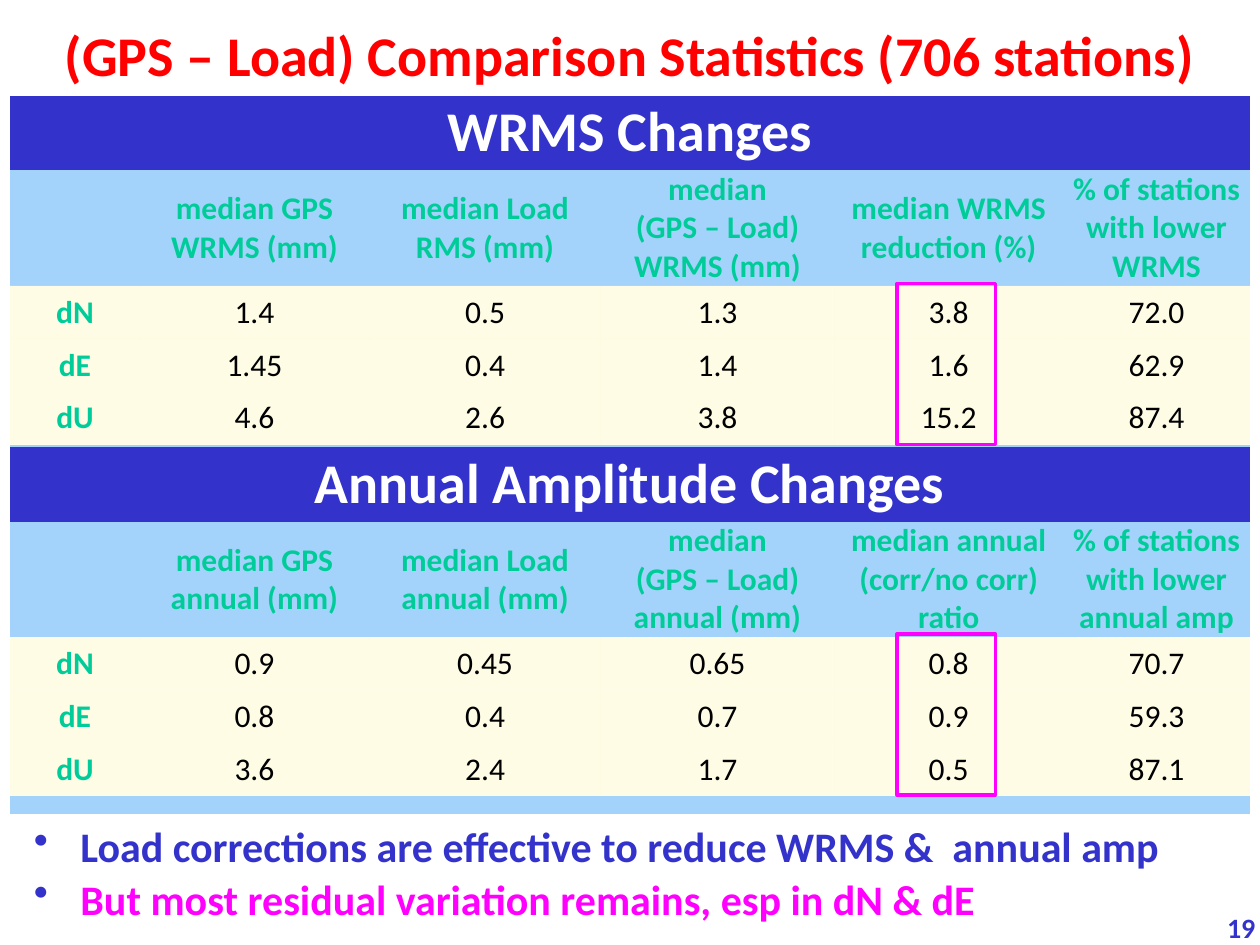
import dataclasses
from typing import Any, Optional

import lxml.etree
import pptx
import pptx.dml.color
import pptx.enum.shapes
import pptx.enum.text
import pptx.oxml.ns
import pptx.util

Inches = pptx.util.Inches
Pt = pptx.util.Pt
PP_ALIGN = pptx.enum.text.PP_ALIGN
MIDDLE = pptx.enum.text.MSO_ANCHOR.MIDDLE


@dataclasses.dataclass(frozen=True)
class Theme:
    font: str = "Calibri"
    red: str = "FF0000"
    blue: str = "3333CC"
    white: str = "FFFFFF"
    sky: str = "A3D3FB"
    cream: str = "FEFBDB"
    green: str = "00CC99"
    black: str = "000000"
    magenta: str = "FF00FF"
    heading_size: int = 32
    bullet_size: int = 24
    table_size: int = 18
    number_size: int = 16
    spacer_size: int = 1
    cream_alpha: int = 70


@dataclasses.dataclass(frozen=True)
class Box:
    left: float
    top: float
    width: float
    height: float

    def lengths(self) -> tuple:
        return tuple(Inches(value) for value in dataclasses.astuple(self))


@dataclasses.dataclass(frozen=True)
class StatisticsTable:
    title: str
    top: float
    marker_top: float
    headers: tuple[str, ...]
    rows: tuple[tuple[str, ...], ...]


THEME = Theme()
TABLE_LEFT = 0.08
COLUMN_WIDTHS = (1.03, 1.82, 1.84, 1.85, 1.82, 1.48)
ROW_HEIGHTS = (0.59, 0.92, 0.42, 0.42, 0.42, 0.14)
NO_STYLE = "{2D5ABB26-0587-4C30-8999-92F81FD0307C}"

TABLES = (
    StatisticsTable(
        "WRMS Changes", 0.76, 2.25,
        ("", "median GPS WRMS (mm)", "median Load RMS (mm)",
         "median\n(GPS – Load) WRMS (mm)", "median WRMS reduction (%)",
         "% of stations with lower WRMS"),
        (("dN", "1.4", "0.5", "1.3", "3.8", "72.0"),
         ("dE", "1.45", "0.4", "1.4", "1.6", "62.9"),
         ("dU", "4.6", "2.6", "3.8", "15.2", "87.4")),
    ),
    StatisticsTable(
        "Annual Amplitude Changes", 3.55, 5.03,
        ("", "median GPS annual (mm)", "median Load annual (mm)",
         "median\n(GPS – Load) annual (mm)", "median annual (corr/no corr) ratio",
         "% of stations with lower annual amp"),
        (("dN", "0.9", "0.45", "0.65", "0.8", "70.7"),
         ("dE", "0.8", "0.4", "0.7", "0.9", "59.3"),
         ("dU", "3.6", "2.4", "1.7", "0.5", "87.1")),
    ),
)
CONCLUSIONS = (
    ("Load corrections are effective to reduce WRMS &  annual amp", THEME.blue),
    ("But most residual variation remains, esp in dN & dE", THEME.magenta),
)


def rgb(color: str) -> pptx.dml.color.RGBColor:
    return pptx.dml.color.RGBColor.from_string(color)


def apply(target: Any, formats: dict[str, Any]) -> None:
    for attribute, value in formats.items():
        setattr(target, attribute, value)


def add_xml(parent: Any, tag: str, **attributes: str) -> Any:
    child = lxml.etree.SubElement(parent, pptx.oxml.ns.qn(tag))
    for key, value in attributes.items():
        child.set(key, value)
    return child


def write(paragraph: Any, text: str, size: int, color: str, bold: bool = True, **formats: Any) -> None:
    run = paragraph.add_run()
    run.text = text
    apply(run.font, {"name": THEME.font, "size": Pt(size), "bold": bold})
    run.font.color.rgb = rgb(color)
    apply(paragraph, formats)


def add_text_frame(slide: Any, box: Box, **formats: Any) -> Any:
    frame = slide.shapes.add_textbox(*box.lengths()).text_frame
    apply(frame, {"word_wrap": True, **formats})
    return frame


def add_bullet(paragraph: Any, color: str) -> None:
    properties = paragraph._p.get_or_add_pPr()
    apply_indent = {"marL": Inches(0.37), "indent": Inches(-0.37)}
    for key, value in apply_indent.items():
        properties.set(key, str(value))
    add_xml(add_xml(properties, "a:buClr"), "a:srgbClr", val=color)
    add_xml(properties, "a:buChar", char="•")


def fill_cell(cell: Any, text: str, fill: str, size: int, color: str,
              bold: bool = True, alpha: Optional[int] = None) -> None:
    margins = dict.fromkeys(("margin_left", "margin_top", "margin_right", "margin_bottom"), 0)
    apply(cell, {**margins, "vertical_anchor": MIDDLE})
    cell.fill.solid()
    cell.fill.fore_color.rgb = rgb(fill)
    if alpha is not None:
        solid_color = cell._tc.tcPr.find(".//" + pptx.oxml.ns.qn("a:srgbClr"))
        add_xml(solid_color, "a:alpha", val=str(alpha * 1000))
    frame = cell.text_frame
    if not text:
        # A small end mark keeps an empty row at its set height.
        frame.paragraphs[0]._p.get_or_add_endParaRPr().set("sz", str(size * 100))
    for index, line in enumerate(text.split("\n") if text else ()):
        paragraph = frame.add_paragraph() if index else frame.paragraphs[0]
        write(paragraph, line, size, color, bold, alignment=PP_ALIGN.CENTER)


def add_statistics(slide: Any, statistics: StatisticsTable) -> None:
    box = Box(TABLE_LEFT, statistics.top, sum(COLUMN_WIDTHS), sum(ROW_HEIGHTS))
    table = slide.shapes.add_table(len(ROW_HEIGHTS), len(COLUMN_WIDTHS), *box.lengths()).table
    apply(table, {"first_row": False, "horz_banding": False})
    table._tbl.tblPr.find(pptx.oxml.ns.qn("a:tableStyleId")).text = NO_STYLE
    for column, width in zip(table.columns, COLUMN_WIDTHS):
        column.width = Inches(width)
    for row, height in zip(table.rows, ROW_HEIGHTS):
        row.height = Inches(height)

    last_row = len(ROW_HEIGHTS) - 1
    for banner in (0, last_row):
        table.cell(banner, 0).merge(table.cell(banner, len(COLUMN_WIDTHS) - 1))
    fill_cell(table.cell(0, 0), statistics.title, THEME.blue, THEME.heading_size, THEME.white)
    for column, header in enumerate(statistics.headers):
        fill_cell(table.cell(1, column), header, THEME.sky, THEME.table_size, THEME.green)
    for row, values in enumerate(statistics.rows, start=2):
        for column, value in enumerate(values):
            is_component = column == 0
            fill_cell(table.cell(row, column), value, THEME.cream, THEME.table_size,
                      THEME.green if is_component else THEME.black,
                      is_component, THEME.cream_alpha)
    for column in range(len(COLUMN_WIDTHS)):
        fill_cell(table.cell(last_row, column), "", THEME.sky, THEME.spacer_size, THEME.black)


def add_marker(slide: Any, top: float) -> None:
    """Outline the reduction values of one table."""
    marker = slide.shapes.add_shape(pptx.enum.shapes.MSO_SHAPE.RECTANGLE,
                                    *Box(7.12, top, 0.78, 1.28).lengths())
    marker.shadow.inherit = False
    marker.fill.background()
    marker.line.color.rgb = rgb(THEME.magenta)
    marker.line.width = Pt(2)


def main() -> None:
    presentation = pptx.Presentation()
    apply(presentation, {"slide_width": Inches(10), "slide_height": Inches(7.5)})
    slide = presentation.slides.add_slide(presentation.slide_layouts[6])

    title = add_text_frame(slide, Box(0, 0.01, 10, 0.84), vertical_anchor=MIDDLE)
    write(title.paragraphs[0], "(GPS – Load) Comparison Statistics (706 stations)",
          THEME.heading_size, THEME.red, alignment=PP_ALIGN.CENTER)
    number = add_text_frame(slide, Box(9.64, 7.23, 0.46, 0.34))
    write(number.paragraphs[0], "19", THEME.number_size, THEME.blue,
          line_spacing=0.8, space_before=Pt(6))

    for statistics in TABLES:
        add_statistics(slide, statistics)

    conclusions = add_text_frame(slide, Box(0.17, 6.54, 9.51, 0.69))
    for index, (text, color) in enumerate(CONCLUSIONS):
        paragraph = conclusions.add_paragraph() if index else conclusions.paragraphs[0]
        write(paragraph, text, THEME.bullet_size, color, line_spacing=0.8, space_before=Pt(7))
        add_bullet(paragraph, THEME.blue)

    for statistics in TABLES:
        add_marker(slide, statistics.marker_top)
    presentation.save("out.pptx")


if __name__ == "__main__":
    main()
